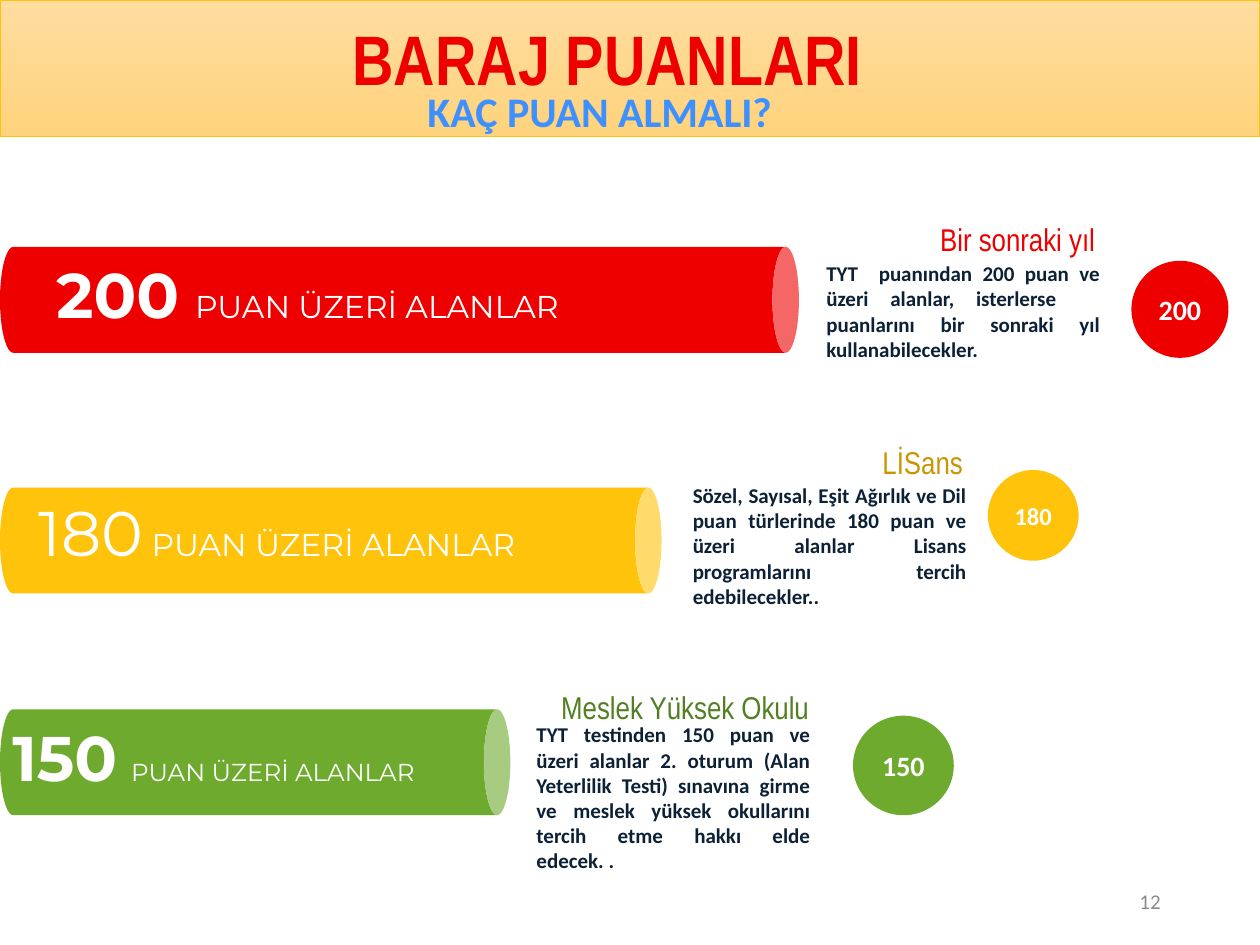
from dataclasses import dataclass

from pptx import Presentation
from pptx.dml.color import RGBColor
from pptx.enum.shapes import MSO_SHAPE
from pptx.enum.text import MSO_ANCHOR, PP_ALIGN
from pptx.util import Inches, Pt

RECTANGLE, CAN, OVAL = MSO_SHAPE.RECTANGLE, MSO_SHAPE.CAN, MSO_SHAPE.OVAL
LEFT, CENTER, RIGHT, JUSTIFY = (
    PP_ALIGN.LEFT, PP_ALIGN.CENTER, PP_ALIGN.RIGHT, PP_ALIGN.JUSTIFY)
TOP, MIDDLE = MSO_ANCHOR.TOP, MSO_ANCHOR.MIDDLE
TITLE_ONLY = 5


@dataclass(frozen=True)
class Theme:
    red: str = "EF0000"
    yellow: str = "FFC30B"
    dark_yellow: str = "C89600"
    green: str = "6DAA2D"
    dark_green: str = "527F22"
    blue: str = "3F90FF"
    navy: str = "0C2036"
    gray: str = "8C8C8C"
    white: str = "FFFFFF"
    banner_top: str = "FFDD9F"
    banner_bottom: str = "FFD37D"
    heading_font: str = "Arial Narrow"
    body_font: str = "Calibri"
    bar_font: str = "Montserrat"
    title_size: int = 40
    subtitle_size: int = 24
    score_size: int = 36
    heading_size: int = 18
    body_size: int = 12


THEME = Theme()


@dataclass(frozen=True)
class Level:
    score: str
    color: str
    bar: tuple             # left, top, width, height
    caption_box: tuple
    caption_runs: list     # text, size, bold
    heading: str
    heading_color: str
    heading_box: tuple
    body: str
    body_box: tuple
    badge: tuple
    badge_size: int


CAPTION = "PUAN ÜZERİ ALANLAR"
LEVELS = [
    Level("200", THEME.red, (0, 1.96, 6.34, 0.84), (0.35, 1.98, 5.1, 0.71),
          [("200", THEME.score_size, True), (" ", 32, True), (CAPTION, 18, False)],
          "Bir sonraki yıl", THEME.red, (6.42, 1.7, 2.37, 0.4),
          "TYT  puanından 200 puan ve üzeri alanlar, isterlerse   "
          "puanlarını bir sonraki yıl kullanabilecekler.",
          (6.46, 2.02, 2.37, 0.91), (8.98, 2.07, 0.77, 0.77), 16),
    Level("180", THEME.yellow, (0, 3.87, 5.25, 0.84), (0.21, 3.87, 4.59, 0.71),
          [("180", THEME.score_size, False), (" " + CAPTION, 18, False)],
          "LİSans", THEME.dark_yellow, (5.37, 3.47, 2.37, 0.4),
          "Sözel, Sayısal, Eşit Ağırlık ve Dil puan türlerinde 180 puan ve "
          "üzeri alanlar Lisans programlarını tercih edebilecekler..",
          (5.4, 3.78, 2.37, 1.11), (7.84, 3.73, 0.72, 0.72), 14),
    Level("150", THEME.green, (0, 5.63, 4.05, 0.84), (0, 5.65, 4.84, 0.71),
          [("150", THEME.score_size, True), (" ", 28, True), (CAPTION, 14, False)],
          "Meslek Yüksek Okulu", THEME.dark_green, (4.15, 5.41, 2.37, 0.4),
          "TYT testinden 150 puan ve üzeri alanlar 2. oturum (Alan Yeterlilik "
          "Testi) sınavına girme ve meslek yüksek okullarını tercih etme hakkı "
          "elde edecek. .",
          (4.16, 5.68, 2.37, 1.31), (6.77, 5.68, 0.8, 0.79), 16),
]


def inches(box):
    return [Inches(length) for length in box]


def format_run(run, size, font, color, bold=False):
    run.font.size = Pt(size)
    run.font.name = font
    run.font.bold = bold
    run.font.color.rgb = RGBColor.from_string(color)


def write(shape, text, size, font, color, bold=False, align=LEFT, anchor=TOP):
    frame = shape.text_frame
    frame.word_wrap = True
    frame.vertical_anchor = anchor
    frame.text = text
    paragraph = frame.paragraphs[0]
    paragraph.alignment = align
    format_run(paragraph.runs[0], size, font, color, bold)


def add_text(slide, box, *content, **layout):
    write(slide.shapes.add_textbox(*inches(box)), *content, **layout)


def add_filled(slide, kind, box, color):
    shape = slide.shapes.add_shape(kind, *inches(box))
    shape.shadow.inherit = False
    shape.fill.solid()
    shape.fill.fore_color.rgb = RGBColor.from_string(color)
    shape.line.fill.background()
    return shape


def add_banner(slide, box):
    banner = add_filled(slide, RECTANGLE, box, THEME.banner_top)
    banner.fill.gradient()
    banner.fill.gradient_angle = 270
    for stop, color in zip(banner.fill.gradient_stops,
                           (THEME.banner_top, THEME.banner_bottom)):
        stop.color.rgb = RGBColor.from_string(color)
    banner.line.color.rgb = RGBColor.from_string(THEME.yellow)
    banner.line.width = Pt(0.5)

    # Title placeholder, brought in front of the banner
    left, top, width, height = box
    title = slide.shapes.title
    banner.element.addnext(title.element)
    title.left, title.top, title.width, title.height = inches(
        (left - 0.18, top + 0.07, width, height + 0.1))
    write(title, "BARAJ PUANLARI", THEME.title_size, THEME.heading_font,
          THEME.red, bold=True, align=CENTER)
    add_text(slide, (left + 0.27, top + 0.63, width - 1.02, 0.5),
             "KAÇ PUAN ALMALI?", THEME.subtitle_size, THEME.body_font,
             THEME.blue, bold=True, align=CENTER)


def add_bar(slide, box, color):
    """Lay a can on its side so that it fills the box."""
    left, top, width, height = box
    upright = (left + (width - height) / 2, top - (width - height) / 2,
               height, width)
    add_filled(slide, CAN, upright, color).rotation = 90


def add_level(slide, level):
    # Bar and its caption
    add_bar(slide, level.bar, level.color)
    caption = slide.shapes.add_textbox(*inches(level.caption_box))
    caption.text_frame.word_wrap = True
    paragraph = caption.text_frame.paragraphs[0]
    for text, size, bold in level.caption_runs:
        run = paragraph.add_run()
        run.text = text
        format_run(run, size, THEME.bar_font, THEME.white, bold)

    # Explanation
    add_text(slide, level.body_box, level.body, THEME.body_size,
             THEME.body_font, THEME.navy, bold=True, align=JUSTIFY)
    add_text(slide, level.heading_box, level.heading, THEME.heading_size,
             THEME.heading_font, level.heading_color, align=RIGHT)

    # Score badge
    badge = add_filled(slide, OVAL, level.badge, level.color)
    write(badge, level.score, level.badge_size, THEME.body_font, THEME.white,
          bold=True, align=CENTER, anchor=MIDDLE)


def add_page_number(slide, box):
    add_text(slide, box, "12", THEME.body_size, THEME.body_font, THEME.gray,
             align=RIGHT, anchor=MIDDLE)


def main():
    presentation = Presentation()
    presentation.slide_width = Inches(10)
    presentation.slide_height = Inches(7.5)
    slide = presentation.slides.add_slide(presentation.slide_layouts[TITLE_ONLY])
    add_banner(slide, (0, 0, 10, 1.08))
    for level in LEVELS:
        add_level(slide, level)
    add_page_number(slide, (7.06, 6.95, 2.25, 0.4))
    presentation.save("out.pptx")


if __name__ == "__main__":
    main()
